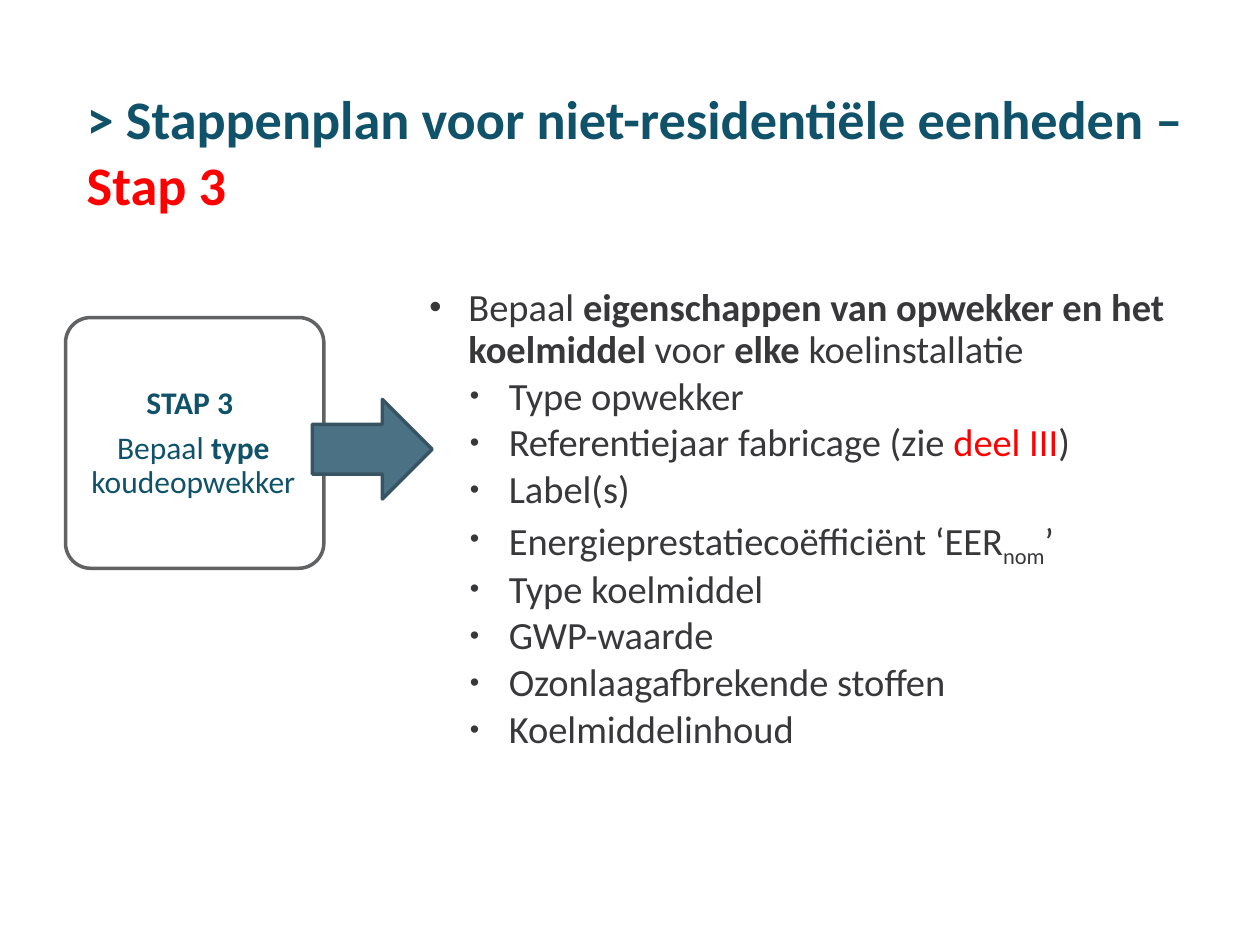
from lxml import etree
from pptx import Presentation
from pptx.dml.color import RGBColor
from pptx.enum import shapes, text
from pptx.oxml.ns import qn
from pptx.util import Inches, Pt

TEAL = RGBColor(0x10, 0x52, 0x69)
RED = RGBColor(0xFF, 0x00, 0x00)
DARK = RGBColor(0x38, 0x37, 0x3A)
WHITE = RGBColor(0xFF, 0xFF, 0xFF)
GREY = RGBColor(0x61, 0x62, 0x64)
ARROW_FILL = RGBColor(0x4B, 0x72, 0x84)
ARROW_LINE = RGBColor(0x37, 0x54, 0x62)


def add_run(paragraph, words, size, color, bold=False):
    run = paragraph.add_run()
    run.text = words
    run.font.name = "Calibri"
    run.font.size = Pt(size)
    run.font.bold = bold
    run.font.color.rgb = color
    return run


def add_outlined(preset, box, fill, line):
    shape = slide.shapes.add_shape(preset, *map(Inches, box))
    shape.shadow.inherit = False
    shape.fill.solid()
    shape.fill.fore_color.rgb = fill
    shape.line.color.rgb = line
    shape.line.width = Pt(2)
    return shape


prs = Presentation()
prs.slide_width, prs.slide_height = Inches(10), Inches(7.5)
slide = prs.slides.add_slide(prs.slide_layouts[6])

# Property list: (level, [(words, bold, color, subscript)])
properties = [
    (0, [("Bepaal ", False, DARK, False),
         ("eigenschappen van opwekker en het koelmiddel ", True, DARK, False),
         ("voor ", False, DARK, False),
         ("elke", True, DARK, False),
         (" koelinstallatie", False, DARK, False)]),
    (1, [("Type opwekker", False, DARK, False)]),
    (1, [("Referentiejaar fabricage (zie ", False, DARK, False),
         ("deel III", False, RED, False),
         (")", False, DARK, False)]),
    (1, [("Label(s)", False, DARK, False)]),
    (1, [("Energieprestatiecoëfficiënt ‘EER", False, DARK, False),
         ("nom", False, DARK, True),
         ("’", False, DARK, False)]),
]
properties += [(1, [(words, False, DARK, False)]) for words in (
    "Type koelmiddel", "GWP-waarde", "Ozonlaagafbrekende stoffen", "Koelmiddelinhoud")]

body = slide.shapes.add_textbox(
    Inches(3.31), Inches(2.24), Inches(6.69), Inches(4.65)).text_frame
body.word_wrap = True
for i, (level, parts) in enumerate(properties):
    item = body.add_paragraph() if i else body.paragraphs[0]
    item.level = level
    item.line_spacing = 0.9
    item.space_before = Pt(3 if i else 0)
    # Hanging indent and bullet
    pPr = item._p.get_or_add_pPr()
    pPr.set("marL", str(Inches(0.63 if level else 0.31)))
    pPr.set("indent", str(Inches(-0.31)))
    etree.SubElement(pPr, qn("a:buSzPct")).set("val", "70000" if level else "90000")
    etree.SubElement(pPr, qn("a:buFont")).set("typeface", "Arial")
    etree.SubElement(pPr, qn("a:buChar")).set("char", "•")
    for words, bold, color, subscript in parts:
        run = add_run(item, words, 22, color, bold)
        if subscript:
            run._r.get_or_add_rPr().set("baseline", "-25000")

# Title
title = slide.shapes.add_textbox(
    Inches(0.59), Inches(0.6), Inches(9.13), Inches(1.18)).text_frame
title.word_wrap = True
title.vertical_anchor = text.MSO_ANCHOR.MIDDLE
heading = title.paragraphs[0]
heading.line_spacing = Pt(38)
add_run(heading, "> Stappenplan voor niet-residentiële eenheden – ", 31, TEAL, True)
add_run(heading, "Stap 3", 31, RED, True)

# Step card
card = add_outlined(shapes.MSO_SHAPE.ROUNDED_RECTANGLE, (0.52, 2.52, 2.05, 1.99), WHITE, GREY)
card.adjustments[0] = 0.1
step = slide.shapes.add_textbox(
    Inches(0.57), Inches(2.58), Inches(1.93), Inches(1.88)).text_frame
step.word_wrap = True
step.vertical_anchor = text.MSO_ANCHOR.MIDDLE
step.margin_left = step.margin_right = step.margin_top = step.margin_bottom = Inches(0.07)
step_lines = [
    [("STAP 3 ", True)],
    [("Bepaal ", False), ("type ", True), ("koudeopwekker", False)],
]
for i, parts in enumerate(step_lines):
    line = step.add_paragraph() if i else step.paragraphs[0]
    line.alignment = text.PP_ALIGN.CENTER
    line.line_spacing = 0.9
    line.space_after = Pt(6.3)
    for words, bold in parts:
        add_run(line, words, 18, TEAL, bold)

# Arrow from the card to the list
add_outlined(shapes.MSO_SHAPE.RIGHT_ARROW, (2.48, 3.17, 0.95, 0.79), ARROW_FILL, ARROW_LINE)

prs.save("out.pptx")
